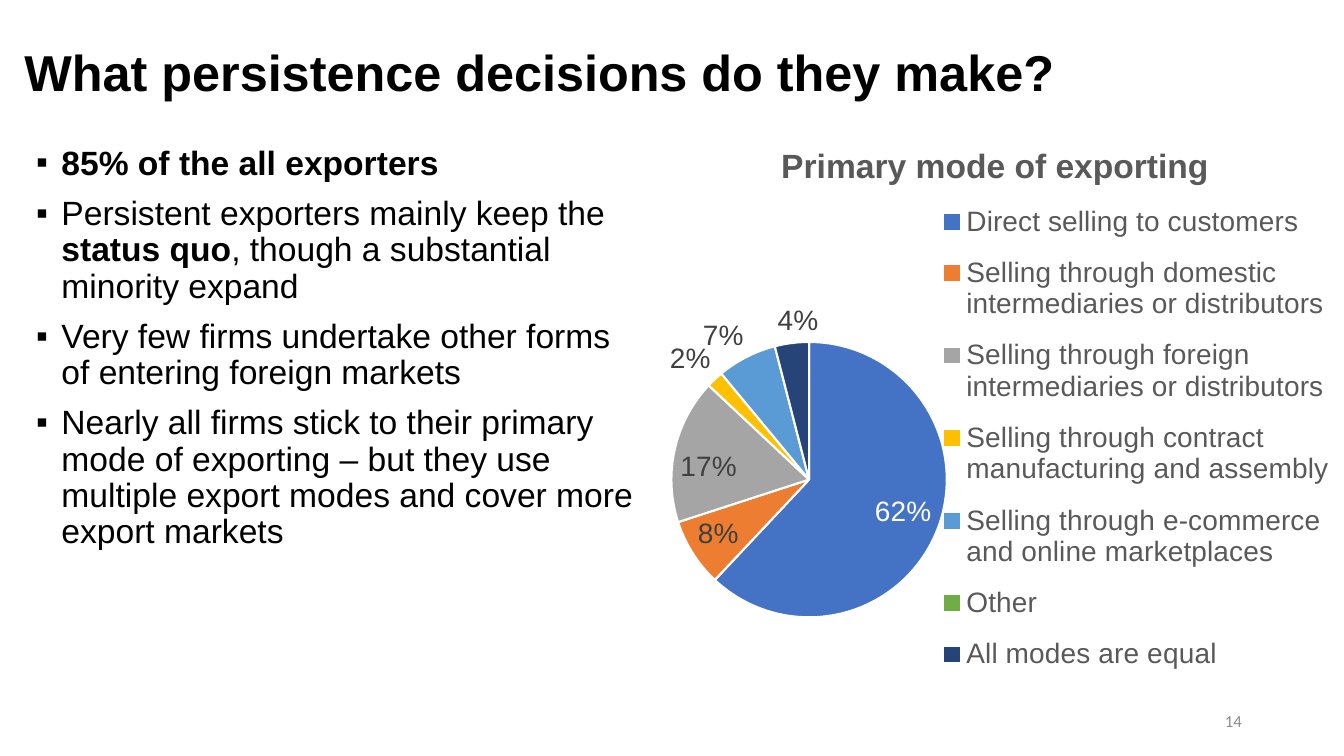
from dataclasses import dataclass

from lxml import etree
from pptx import Presentation
from pptx.chart.data import CategoryChartData
from pptx.dml.color import RGBColor
from pptx.enum.chart import XL_CHART_TYPE, XL_LABEL_POSITION, XL_LEGEND_POSITION
from pptx.enum.text import MSO_ANCHOR, MSO_AUTO_SIZE, PP_ALIGN
from pptx.oxml import parse_xml
from pptx.oxml.ns import nsdecls, qn
from pptx.util import Cm, Pt

COLORS = {
    "text": "000000",
    "muted": "595959",
    "label": "404040",
    "page": "8C8C8C",
    "white": "FFFFFF",
    "blue": "4472C4",
    "orange": "ED7D31",
    "grey": "A5A5A5",
    "yellow": "FFC000",
    "sky": "5B9BD5",
    "green": "70AD47",
    "navy": "264478",
}


@dataclass
class Mode:
    name: str
    share: int
    color: str
    label_inside: bool = False
    label_color: str = "label"
    label_shift: float = 0


MODES = [
    Mode("Direct selling to customers", 62, "blue", True, "white"),
    Mode("Selling through domestic intermediaries or distributors", 8, "orange", True),
    Mode("Selling through foreign intermediaries or distributors", 17, "grey", True),
    Mode("Selling through contract manufacturing and assembly", 2, "yellow"),
    Mode("Selling through e-commerce and online marketplaces", 7, "sky"),
    Mode("Other", 0, "green"),
    Mode("All modes are equal", 4, "navy", label_shift=0.04),
]

# Each finding is a list of (text, bold) pieces.
FINDINGS = [
    [("85% of the all exporters", True)],
    [
        ("Persistent exporters mainly keep the ", False),
        ("status quo", True),
        (", though a substantial minority expand", False),
    ],
    [("Very few firms undertake other forms of entering foreign markets", False)],
    [
        (
            "Nearly all firms stick to their primary mode of exporting – but they use "
            "multiple export modes and cover more export markets",
            False,
        )
    ],
]


def rgb(name: str) -> RGBColor:
    return RGBColor.from_string(COLORS[name])


def style_font(font, size: float, color: str = "text", bold: bool = False,
               face: str = "Arial") -> None:
    font.name, font.size, font.bold = face, Pt(size), bold
    font.color.rgb = rgb(color)


def write_text(frame, paragraphs: list, *, size: float, color: str = "text",
               face: str = "Arial", align=PP_ALIGN.LEFT, anchor=MSO_ANCHOR.TOP,
               line_spacing: float = 1.0, space_before: float = 0,
               bullet: str = "") -> None:
    frame.word_wrap = True
    frame.auto_size = MSO_AUTO_SIZE.NONE
    frame.vertical_anchor = anchor
    for index, pieces in enumerate(paragraphs):
        paragraph = frame.paragraphs[0] if index == 0 else frame.add_paragraph()
        paragraph.alignment = align
        paragraph.line_spacing = line_spacing
        paragraph.space_before = Pt(space_before if index else 0)
        if bullet:
            properties = paragraph._p.get_or_add_pPr()
            properties.set("marL", str(Cm(0.64)))
            properties.set("indent", str(-Cm(0.64)))
            etree.SubElement(properties, qn("a:buFont")).set("typeface", "Arial")
            etree.SubElement(properties, qn("a:buChar")).set("char", bullet)
        for text, bold in pieces:
            run = paragraph.add_run()
            run.text = text
            style_font(run.font, size, color, bold, face)


def manual_layout(**settings):
    """Build a c:layout element; keywords follow the schema order."""
    items = "".join(f'<c:{key} val="{value}"/>' for key, value in settings.items())
    return parse_xml(
        f'<c:layout {nsdecls("c")}><c:manualLayout>{items}</c:manualLayout></c:layout>'
    )


def place(parent, after: str, layout) -> None:
    """Put a layout into a chart part, behind the named child if there is one."""
    for old in parent.findall(qn("c:layout")):
        parent.remove(old)
    previous = parent.find(qn(after)) if after else None
    if previous is None:
        parent.insert(0, layout)
    else:
        previous.addnext(layout)


def format_slices(series) -> None:
    labels = series.data_labels
    labels.show_percentage, labels.show_value = True, False
    style_font(labels.font, 20, "label")
    for index, mode in enumerate(MODES):
        point = series.points[index]
        point.format.fill.solid()
        point.format.fill.fore_color.rgb = rgb(mode.color)
        point.format.line.color.rgb = rgb("white")
        point.format.line.width = Pt(1.5)
        label = point.data_label
        style_font(label.font, 20, mode.label_color)
        label.position = (XL_LABEL_POSITION.INSIDE_END if mode.label_inside
                          else XL_LABEL_POSITION.OUTSIDE_END)
    for element, mode in zip(series._element.xpath(".//c:dLbl"), MODES):
        element.find(qn("c:showVal")).set("val", "0")
        element.find(qn("c:showPercent")).set("val", "1")
        if mode.label_shift:
            place(element, "c:idx", manual_layout(x=mode.label_shift, y=0))


def add_modes_chart(slide) -> None:
    data = CategoryChartData()
    data.categories = [mode.name for mode in MODES]
    data.add_series("Series 1", [mode.share for mode in MODES])
    chart = slide.shapes.add_chart(
        XL_CHART_TYPE.PIE, Cm(16.4), Cm(3.05), Cm(17.35), Cm(14.94), data
    ).chart
    style_font(chart.font, 20)
    chart.has_title = True
    heading = chart.chart_title.text_frame.paragraphs[0].add_run()
    heading.text = "Primary mode of exporting"
    style_font(heading.font, 24, "muted", True)
    chart.has_legend = True
    chart.legend.position = XL_LEGEND_POSITION.RIGHT
    chart.legend.include_in_layout = False
    style_font(chart.legend.font, 20, "muted")
    place(chart.legend._element, "c:legendPos",
          manual_layout(xMode="edge", yMode="edge", x=0.41, y=0.11, w=0.59, h=0.85))
    plot = chart.plots[0]
    plot.vary_by_categories = True
    place(plot._element.getparent(), "",
          manual_layout(layoutTarget="inner", xMode="edge", yMode="edge",
                        x=0.03, y=0.27, w=0.4, h=0.67))
    format_slices(plot.series[0])


def main() -> None:
    deck = Presentation()
    deck.slide_width, deck.slide_height = Cm(33.87), Cm(19.05)
    slide = deck.slides.add_slide(deck.slide_layouts[5])

    title = slide.shapes.title
    title.left, title.top, title.width, title.height = Cm(0.36), Cm(1.07), Cm(29.2), Cm(1.65)
    write_text(title.text_frame, [[("What persistence decisions do they make?", True)]],
               size=36, anchor=MSO_ANCHOR.MIDDLE, line_spacing=0.9)

    findings = slide.shapes.add_textbox(Cm(0.66), Cm(3.56), Cm(15.75), Cm(15.4))
    write_text(findings.text_frame, FINDINGS, size=24, line_spacing=0.9,
               space_before=10, bullet="▪")

    add_modes_chart(slide)

    page_number = slide.shapes.add_textbox(Cm(23.93), Cm(17.65), Cm(7.62), Cm(1.02))
    write_text(page_number.text_frame, [[("14", False)]], size=12, color="page",
               face="Calibri", align=PP_ALIGN.RIGHT, anchor=MSO_ANCHOR.MIDDLE)

    deck.save("out.pptx")


if __name__ == "__main__":
    main()
